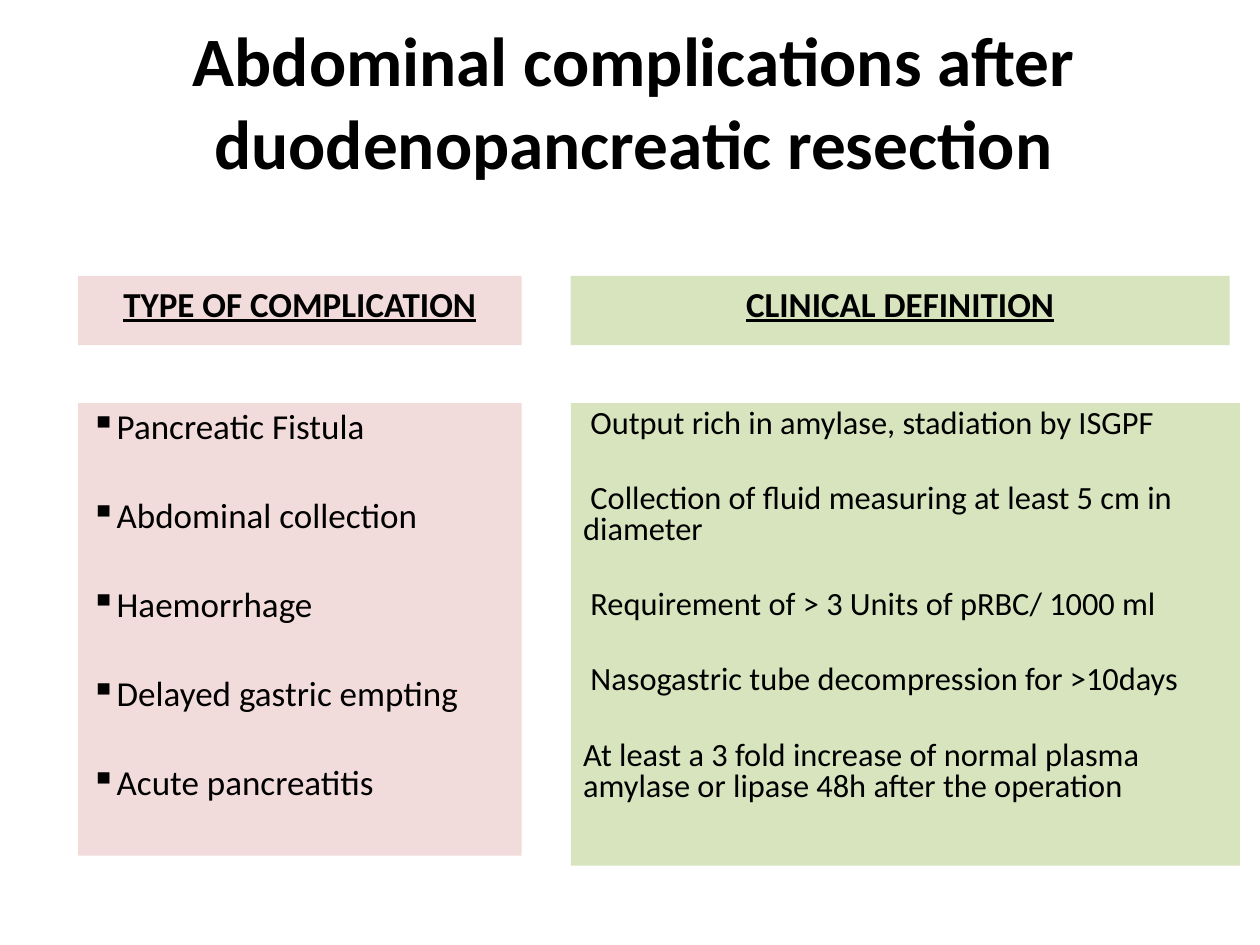
"""Build a slide defining abdominal complications after duodenopancreatic resection."""
import lxml.etree
import pptx
import pptx.dml.color
import pptx.enum.shapes
import pptx.enum.text
import pptx.oxml.ns
import pptx.util

Inches = pptx.util.Inches
Pt = pptx.util.Pt
BLACK = pptx.dml.color.RGBColor(0x00, 0x00, 0x00)
PINK = pptx.dml.color.RGBColor(0xF2, 0xDC, 0xDB)
GREEN = pptx.dml.color.RGBColor(0xD7, 0xE4, 0xBD)
CENTER = pptx.enum.text.PP_ALIGN.CENTER
LEFT = pptx.enum.text.PP_ALIGN.LEFT

COMPLICATIONS = [
    "Pancreatic Fistula",
    "Abdominal collection",
    "Haemorrhage",
    "Delayed gastric empting",
    "Acute pancreatitis",
]
DEFINITIONS = [
    " Output rich in amylase, stadiation by ISGPF",
    " Collection of fluid measuring at least 5 cm in diameter",
    " Requirement of > 3 Units of pRBC/ 1000 ml",
    " Nasogastric tube decompression for >10days",
    "At least a 3 fold increase of normal plasma amylase or lipase 48h after the operation",
]


def write_lines(box, lines, size, align, bold=False, spacing=1.0, gap=0):
    frame = box.text_frame
    frame.word_wrap = True
    frame.text = "\n".join(lines)
    for index, para in enumerate(frame.paragraphs):
        para.alignment = align
        para.line_spacing = spacing
        para.space_before = Pt(gap if index else 0)
        para.font.name = "Calibri"
        para.font.size = Pt(size)
        para.font.bold = bold
        para.font.color.rgb = BLACK
    return frame


def add_panel(left, top, width, height, color):
    panel = page.shapes.add_shape(
        pptx.enum.shapes.MSO_SHAPE.RECTANGLE,
        Inches(left), Inches(top), Inches(width), Inches(height))
    panel.shadow.inherit = False
    panel.fill.solid()
    panel.fill.fore_color.rgb = color
    panel.line.fill.background()
    panel.text_frame.vertical_anchor = pptx.enum.text.MSO_ANCHOR.TOP
    return panel


deck = pptx.Presentation()
deck.slide_width = Inches(10)
deck.slide_height = Inches(7.5)
page = deck.slides.add_slide(deck.slide_layouts[6])

title = page.shapes.add_textbox(Inches(0.78), Inches(0.09), Inches(8.5), Inches(1.41))
title.text_frame.vertical_anchor = pptx.enum.text.MSO_ANCHOR.MIDDLE
write_lines(title, ["Abdominal complications after duodenopancreatic resection"],
            39.6, CENTER, bold=True)

for heading, left, width, color in [
    ("TYPE OF COMPLICATION", 0.62, 3.52, PINK),
    ("CLINICAL DEFINITION", 4.53, 5.23, GREEN),
]:
    header = add_panel(left, 2.19, width, 0.55, color)
    frame = write_lines(header, [heading], 20, CENTER, bold=True)
    frame.paragraphs[0].font.underline = True
    frame.paragraphs[0].runs[0].font.underline = True

types = add_panel(0.62, 3.2, 3.52, 3.59, PINK)
for para in write_lines(types, COMPLICATIONS, 20, LEFT, spacing=0.9, gap=29.2).paragraphs:
    properties = para._p.get_or_add_pPr()
    bullet = lxml.etree.Element(pptx.oxml.ns.qn("a:buChar"), char="▪")
    properties.find(pptx.oxml.ns.qn("a:defRPr")).addprevious(bullet)

definitions = add_panel(4.53, 3.2, 5.31, 3.67, GREEN)
write_lines(definitions, DEFINITIONS, 18.5, LEFT, spacing=0.8, gap=25.2)

deck.save("out.pptx")
